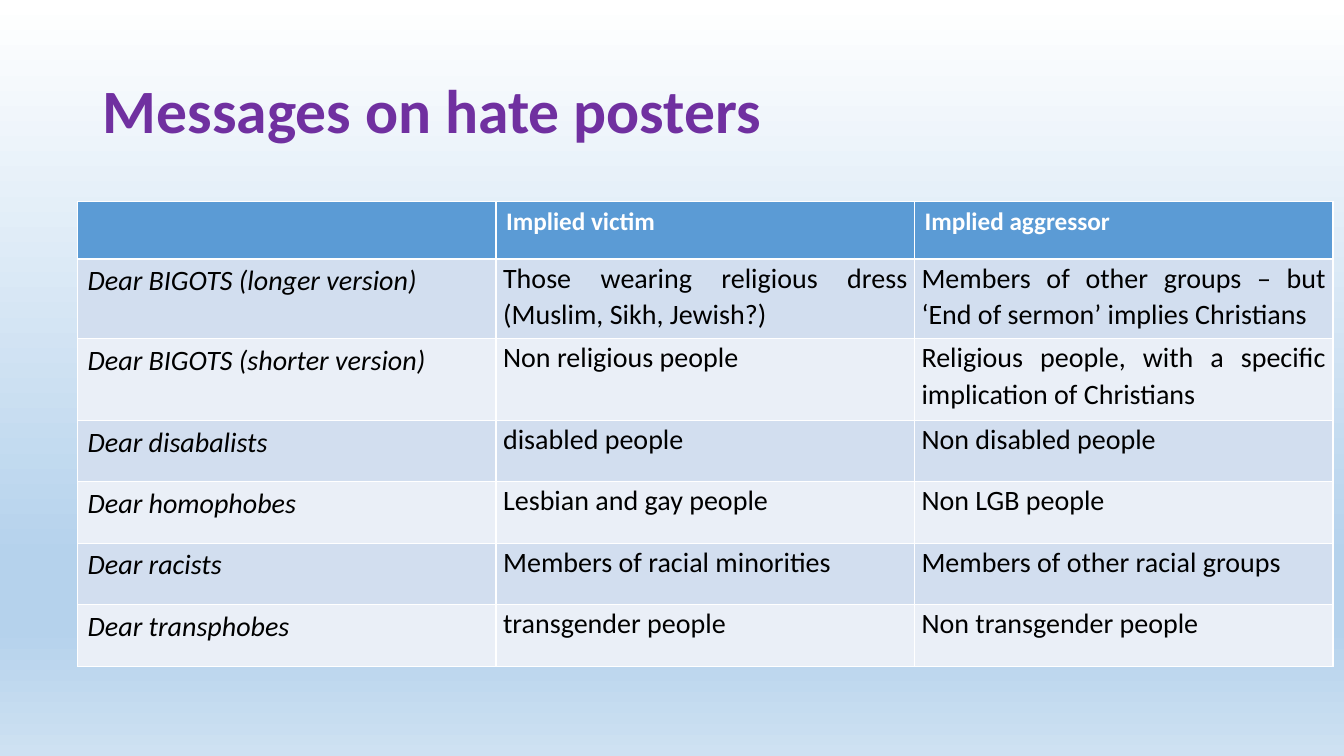
from lxml.etree import SubElement
from pptx import Presentation
from pptx.dml.color import RGBColor
from pptx.enum.text import MSO_ANCHOR, PP_ALIGN
from pptx.oxml.ns import qn
from pptx.util import Inches, Pt

FONT = "Calibri"
BACKGROUND_STOPS = [(0, "FFFFFF"), (74, "B5D2EC"), (83, "B5D2EC"), (100, "CEE1F2")]
HEADER_FILL = "5B9BD5"
BAND_FILLS = ["D2DEEF", "EAEFF7"]
COLUMN_WIDTH = 4.15
ROW_HEIGHTS = [0.57, 0.79, 0.81] + [0.61] * 4
HEADINGS = ["", "Implied victim", "Implied aggressor"]
POSTERS = [
    ("Dear BIGOTS (longer version)",
     "Those wearing religious dress (Muslim, Sikh, Jewish?)",
     "Members of other groups – but ‘End of sermon’ implies Christians"),
    ("Dear BIGOTS (shorter version)",
     "Non religious people",
     "Religious people, with a specific implication of Christians"),
    ("Dear disabalists", "disabled people", "Non disabled people"),
    ("Dear homophobes", "Lesbian and gay people", "Non LGB people"),
    ("Dear racists", "Members of racial minorities", "Members of other racial groups"),
    ("Dear transphobes", "transgender people", "Non transgender people"),
]


def color(value):
    return RGBColor.from_string(value)


def style_font(paragraph, size, font_color, bold=False, italic=False):
    font = paragraph.font
    font.name = FONT
    font.size = Pt(size)
    font.bold = bold
    font.italic = italic
    font.color.rgb = color(font_color)


def set_background(slide):
    fill = slide.background.fill
    fill.gradient()
    fill.gradient_angle = 270
    stop_list = slide.element.find(".//" + qn("a:gsLst"))
    for stop in list(stop_list):
        stop_list.remove(stop)
    for position, value in BACKGROUND_STOPS:
        stop = SubElement(stop_list, qn("a:gs"), pos=str(position * 1000))
        SubElement(stop, qn("a:srgbClr"), val=value)


def set_title(slide, text):
    title = slide.shapes.title
    title.left, title.top = Inches(0.92), Inches(0.4)
    title.width, title.height = Inches(11.5), Inches(1.45)
    title.text_frame.text = text
    title.text_frame.vertical_anchor = MSO_ANCHOR.MIDDLE
    paragraph = title.text_frame.paragraphs[0]
    paragraph.alignment = PP_ALIGN.LEFT
    paragraph.line_spacing = 0.9
    style_font(paragraph, 44, "7030A0", bold=True)


def fill_cell(cell, text, fill_color):
    cell.fill.solid()
    cell.fill.fore_color.rgb = color(fill_color)
    cell.text = text
    return cell.text_frame.paragraphs[0]


def justify_answer(cell, paragraph):
    cell.margin_left = cell.margin_right = Inches(0.07)
    cell.margin_top = cell.margin_bottom = 0
    paragraph.alignment = PP_ALIGN.JUSTIFY
    paragraph.line_spacing = 1.07


def add_poster_table(slide):
    frame = slide.shapes.add_table(
        len(ROW_HEIGHTS), len(HEADINGS), Inches(0.77), Inches(2),
        Inches(COLUMN_WIDTH * len(HEADINGS)), Inches(sum(ROW_HEIGHTS)))
    table = frame.table
    for column in table.columns:
        column.width = Inches(COLUMN_WIDTH)
    for row, height in zip(table.rows, ROW_HEIGHTS):
        row.height = Inches(height)

    for column_index, heading in enumerate(HEADINGS):
        paragraph = fill_cell(table.cell(0, column_index), heading, HEADER_FILL)
        style_font(paragraph, 18, "FFFFFF", bold=True)

    for row_index, poster in enumerate(POSTERS):
        for column_index, text in enumerate(poster):
            cell = table.cell(row_index + 1, column_index)
            paragraph = fill_cell(cell, text, BAND_FILLS[row_index % 2])
            style_font(paragraph, 20, "000000", italic=column_index == 0)
            if column_index > 0:
                justify_answer(cell, paragraph)


def main():
    presentation = Presentation()
    presentation.slide_width = Inches(13.33)
    presentation.slide_height = Inches(7.5)
    slide = presentation.slides.add_slide(presentation.slide_layouts[5])
    set_background(slide)
    set_title(slide, "Messages on hate posters")
    add_poster_table(slide)
    presentation.save("out.pptx")


if __name__ == "__main__":
    main()
